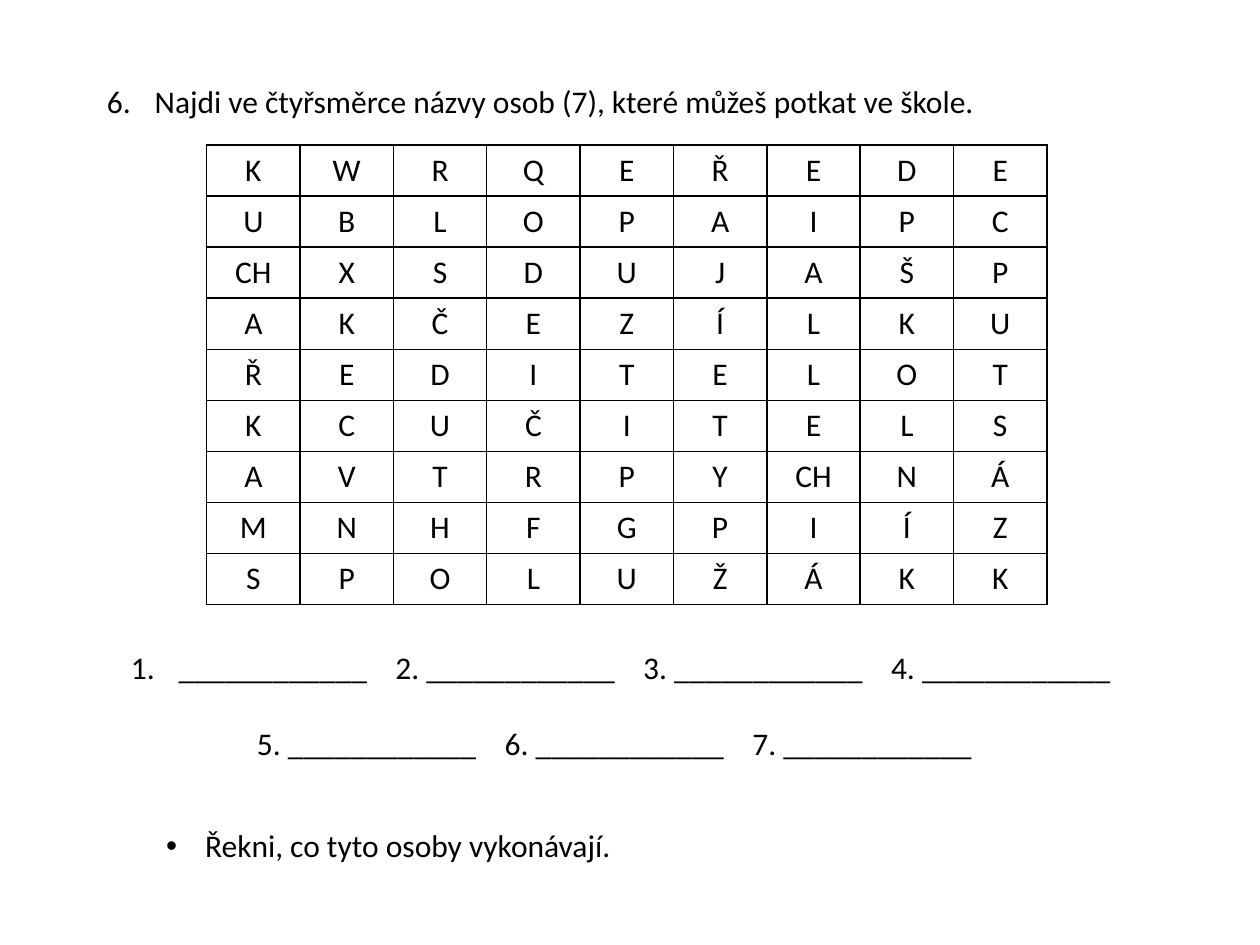
from dataclasses import dataclass

from lxml import etree
from pptx import Presentation
from pptx.dml.color import RGBColor
from pptx.enum.text import PP_ALIGN
from pptx.oxml.ns import qn
from pptx.util import Inches, Pt

CENTER = PP_ALIGN.CENTER


@dataclass(frozen=True)
class Theme:
    """Colours, type sizes and line widths of the worksheet."""
    font: str = "Calibri"
    size: int = Pt(18)
    ink: RGBColor = RGBColor(0, 0, 0)
    border: int = Pt(1)
    line_gap: int = Pt(22)
    answer_gap: int = Pt(12.2)


THEME = Theme()
LETTERS = (
    "K W R Q E Ř E D E",
    "U B L O P A I P C",
    "CH X S D U J A Š P",
    "A K Č E Z Í L K U",
    "Ř E D I T E L O T",
    "K C U Č I T E L S",
    "A V T R P Y CH N Á",
    "M N H F G P I Í Z",
    "S P O L U Ž Á K K",
)
BLANK = "_" * 12


def style_span(span):
    """Give a run the worksheet font, size and colour."""
    span.font.name = THEME.font
    span.font.size = THEME.size
    span.font.color.rgb = THEME.ink


def add_text(page, left, top, width, height):
    """Add a wrapping text box and return its text frame."""
    frame = page.shapes.add_textbox(left, top, width, height).text_frame
    frame.word_wrap = True
    return frame


def set_indent(para, margin, hanging=0):
    """Set the left margin and hanging indent of a paragraph."""
    properties = para._p.get_or_add_pPr()
    properties.set("marL", str(margin))
    properties.set("indent", str(-hanging))
    return properties


def set_number(para, indent, start=1):
    """Number a paragraph automatically from the given start."""
    properties = set_indent(para, indent, indent)
    etree.SubElement(properties, qn("a:buFont"), typeface="+mj-lt")
    etree.SubElement(properties, qn("a:buAutoNum"), type="arabicPeriod", startAt=str(start))


def set_bullet(para, indent):
    """Give a paragraph a round bullet."""
    properties = set_indent(para, indent, indent)
    etree.SubElement(properties, qn("a:buFont"), typeface="Arial")
    etree.SubElement(properties, qn("a:buChar"), char="•")


def add_task(page, left, top, width, height):
    """Place the numbered task above the letter grid."""
    para = add_text(page, left, top, width, height).paragraphs[0]
    para.text = "Najdi ve čtyřsměrce názvy osob (7), které můžeš potkat ve škole."
    set_number(para, Inches(0.38), start=6)
    style_span(para.runs[0])


def add_borders(cell):
    """Draw a thin line on every side of a cell."""
    properties = cell._tc.get_or_add_tcPr()
    for side in ("a:lnL", "a:lnR", "a:lnT", "a:lnB"):
        line = etree.SubElement(properties, qn(side), w=str(THEME.border))
        fill = etree.SubElement(line, qn("a:solidFill"))
        etree.SubElement(fill, qn("a:srgbClr"), val=str(THEME.ink))


def add_letter_grid(page, left, top, width, height):
    """Place the word search as an evenly divided table."""
    rows = [line.split() for line in LETTERS]
    table = page.shapes.add_table(len(rows), len(rows[0]), left, top, width, height).table
    table.first_row = table.horz_banding = False
    for row_index, letters in enumerate(rows):
        for column_index, letter in enumerate(letters):
            cell = table.cell(row_index, column_index)
            cell.text = letter
            para = cell.text_frame.paragraphs[0]
            para.alignment = CENTER
            style_span(para.runs[0])
            add_borders(cell)
            cell.fill.background()


def fill_answers(para, answers):
    """Write answer blanks in one line, parted by a widened space."""
    for index, answer in enumerate(answers):
        if index:
            gap = para.add_run()
            gap.text = " "
            style_span(gap)
            gap._r.get_or_add_rPr().set("spc", str(round(THEME.answer_gap.pt * 100)))
        span = para.add_run()
        span.text = answer
        style_span(span)


def add_answers(page, left, top, width, height):
    """Place the seven numbered blanks in two lines."""
    frame = add_text(page, left, top, width, height)
    first = frame.paragraphs[0]
    set_number(first, Inches(0.38))
    fill_answers(first, [BLANK] + [f"{number}. {BLANK}" for number in range(2, 5)])
    second = frame.add_paragraph()
    set_indent(second, Inches(1))
    second.space_before = THEME.line_gap
    fill_answers(second, [f"{number}. {BLANK}" for number in range(5, 8)])


def add_follow_up(page, left, top, width, height):
    """Place the bulleted speaking task."""
    para = add_text(page, left, top, width, height).paragraphs[0]
    para.text = "Řekni, co tyto osoby vykonávají."
    set_bullet(para, Inches(0.31))
    style_span(para.runs[0])


def main():
    """Build the worksheet and save it."""
    deck = Presentation()
    deck.slide_width, deck.slide_height = Inches(10), Inches(7.5)
    page = deck.slides.add_slide(deck.slide_layouts[6])
    add_task(page, Inches(0.75), Inches(0.6), Inches(7.16), Inches(0.4))
    add_letter_grid(page, Inches(1.64), Inches(1.15), Inches(6.67), Inches(3.65))
    add_answers(page, Inches(0.94), Inches(5.09), Inches(8.08), Inches(1.01))
    add_follow_up(page, Inches(1.22), Inches(6.51), Inches(3.77), Inches(0.4))
    deck.save("out.pptx")


if __name__ == "__main__":
    main()
